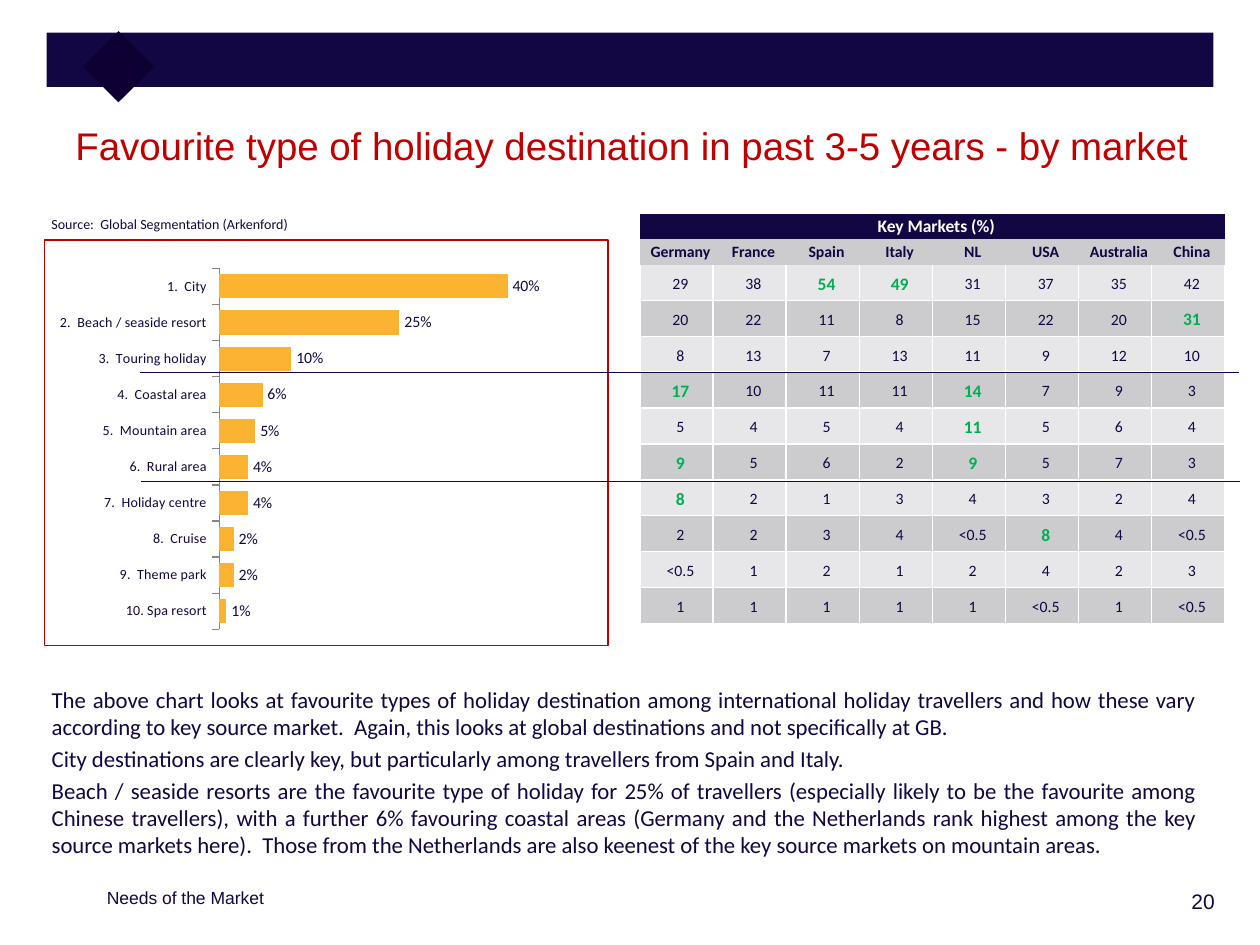
from lxml import etree
from pptx import Presentation
from pptx import util as u
from pptx.chart.data import CategoryChartData
from pptx.dml.color import RGBColor
from pptx.enum import chart as charts, shapes, text
from pptx.oxml import parse_xml
from pptx.oxml.ns import nsdecls, qn

COLORS = {"navy": "120742", "dark": "0E0033", "red": "C00000", "green": "00B050",
          "amber": "FDB332", "light": "E7E7E9", "grey": "CCCCCF",
          "axis": "868686", "white": "FFFFFF"}
ALIGN = text.PP_ALIGN
PLAIN_TABLE = "{2D5ABB26-0587-4C30-8999-92F81FD0307C}"


def rgb(name):
    return RGBColor.from_string(COLORS[name])


class SlideBuilder:
    def __init__(self, page, font="Calibri", color="navy"):
        self.page, self.font, self.color = page, font, color

    def frame(self, left, top, width, height):
        return [u.Inches(value) for value in (left, top, width, height)]

    def style(self, para, size, align=ALIGN.LEFT, font=None, color=None, bold=False):
        para.alignment = align
        for span in para.runs:
            span.font.size = u.Pt(size)
            span.font.name = font or self.font
            span.font.bold = bold
            span.font.color.rgb = rgb(color or self.color)

    def rect(self, place, color, rotation=0):
        shape = self.page.shapes.add_shape(
            shapes.MSO_SHAPE.RECTANGLE, *self.frame(*place))
        shape.shadow.inherit = False
        shape.fill.solid()
        shape.fill.fore_color.rgb = rgb(color)
        shape.line.fill.background()
        shape.rotation = rotation

    def text(self, place, lines, size, wrap=True, left=0.1, gap=0, spacing=None, **look):
        box = self.page.shapes.add_textbox(*self.frame(*place))
        frame = box.text_frame
        frame.word_wrap = wrap
        frame.margin_left = u.Inches(left)
        frame.text = "\n".join(lines)
        for index, para in enumerate(frame.paragraphs):
            self.style(para, size, **look)
            if spacing:
                para.line_spacing = u.Pt(spacing)
            if index:
                para.space_before = u.Pt(gap)

    def line(self, left, right, y):
        line = self.page.shapes.add_connector(
            shapes.MSO_CONNECTOR.STRAIGHT,
            u.Inches(left), u.Inches(y), u.Inches(right), u.Inches(y))
        line.line.color.rgb = rgb(self.color)
        line.line.width = u.Pt(0.5)
        etree.SubElement(line._element.spPr, qn("a:effectLst"))

    def cell(self, cell, value, fill, size=9, bold=True, color=None, body=False):
        cell.text_frame.text = value
        cell.vertical_anchor = text.MSO_ANCHOR.MIDDLE
        cell.margin_left, cell.margin_right = u.Inches(0.08), u.Inches(0.02)
        cell.margin_top = cell.margin_bottom = 0
        para = cell.text_frame.paragraphs[0]
        self.style(para, size, ALIGN.CENTER, color=color, bold=bold)
        if body:
            para.line_spacing = 1.15
            for side in ("lnL", "lnR", "lnB"):
                cell._tc.get_or_add_tcPr().append(parse_xml(
                    f'<a:{side} {nsdecls("a")} w="12700"><a:solidFill>'
                    f'<a:srgbClr val="{COLORS["white"]}"/></a:solidFill></a:{side}>'))
        cell.fill.solid()
        cell.fill.fore_color.rgb = rgb(fill)

    def table(self, place, title, heads, rows, marked):
        shape = self.page.shapes.add_table(
            len(rows) + 2, len(heads), *self.frame(*place))
        shape._element.find(".//" + qn("a:tableStyleId")).text = PLAIN_TABLE
        table = shape.table
        head_height = 0.2
        body_height = (place[3] - 2 * head_height) / len(rows)
        for index, row in enumerate(table.rows):
            row.height = u.Inches(head_height if index < 2 else body_height)
        for column in table.columns:
            column.width = u.Inches(place[2] / len(heads))
        table.cell(0, 0).merge(table.cell(0, len(heads) - 1))
        self.cell(table.cell(0, 0), title, "navy", size=10, color="white")
        for col, head in enumerate(heads):
            self.cell(table.cell(1, col), head, "grey")
        for row, values in enumerate(rows):
            fill = "grey" if row % 2 else "light"
            for col, value in enumerate(values):
                high = (row, col) in marked
                self.cell(table.cell(row + 2, col), value, fill,
                          size=10 if high else 9, bold=high,
                          color="green" if high else None, body=True)

    def bar_chart(self, place, names, values, plot):
        data = CategoryChartData()
        data.categories = names
        data.add_series("Series 1", values)
        chart = self.page.shapes.add_chart(
            charts.XL_CHART_TYPE.BAR_CLUSTERED, *self.frame(*place), data).chart
        chart.has_title = chart.has_legend = False
        chart.font.size, chart.font.name = u.Pt(10), self.font
        chart.font.color.rgb = rgb(self.color)
        # Axes
        names_axis, values_axis = chart.category_axis, chart.value_axis
        names_axis.reverse_order = True
        names_axis.has_major_gridlines = values_axis.has_major_gridlines = False
        names_axis.major_tick_mark = charts.XL_TICK_MARK.OUTSIDE
        names_axis.tick_labels.font.size = u.Pt(8)
        names_axis.format.line.color.rgb = rgb("axis")
        values_axis.minimum_scale, values_axis.maximum_scale = 0, 50
        values_axis.visible = False
        # Bars and their labels
        bars = chart.plots[0]
        bars.gap_width = 50
        bars.vary_by_categories = False
        fill = bars.series[0].format.fill
        fill.solid()
        fill.fore_color.rgb = rgb("amber")
        labels = bars.series[0].data_labels
        labels.show_value = True
        labels.number_format, labels.number_format_is_linked = "General\\%", False
        labels.position = charts.XL_LABEL_POSITION.OUTSIDE_END
        labels.font.size, labels.font.name = u.Pt(9), self.font
        labels.font.color.rgb = rgb(self.color)
        # Plot area position and outer border
        area = chart._chartSpace.find(".//" + qn("c:plotArea"))
        for old in area.findall(qn("c:layout")):
            area.remove(old)
        sizes = "".join(f'<c:{key} val="{value}"/>' for key, value in zip("xywh", plot))
        area.insert(0, parse_xml(
            f'<c:layout {nsdecls("c")}><c:manualLayout><c:layoutTarget val="inner"/>'
            f'<c:xMode val="edge"/><c:yMode val="edge"/>{sizes}'
            '</c:manualLayout></c:layout>'))
        chart._chartSpace.find(qn("c:chart")).addnext(parse_xml(
            f'<c:spPr {nsdecls("c", "a")}><a:noFill/><a:ln w="9525"><a:solidFill>'
            f'<a:srgbClr val="{COLORS["red"]}"/></a:solidFill></a:ln></c:spPr>'))


DESTINATIONS = ["1.  City", "2.  Beach / seaside resort", "3.  Touring holiday",
                "4.  Coastal area", "5.  Mountain area", "6.  Rural area",
                "7.  Holiday centre", "8.  Cruise", "9.  Theme park", "10. Spa resort"]
SHARES = [40, 25, 10, 6, 5, 4, 4, 2, 2, 1]
MARKETS = ["Germany", "France", "Spain", "Italy", "NL", "USA", "Australia", "China"]
MARKET_SHARES = [row.split() for row in (
    "29 38 54 49 31 37 35 42", "20 22 11 8 15 22 20 31", "8 13 7 13 11 9 12 10",
    "17 10 11 11 14 7 9 3", "5 4 5 4 11 5 6 4", "9 5 6 2 9 5 7 3",
    "8 2 1 3 4 3 2 4", "2 2 3 4 <0.5 8 4 <0.5", "<0.5 1 2 1 2 4 2 3",
    "1 1 1 1 1 <0.5 1 <0.5")]
HIGH = {(0, 2), (0, 3), (1, 7), (3, 0), (3, 4), (4, 4), (5, 0), (5, 4), (6, 0), (7, 5)}
COMMENTS = [
    "The above chart looks at favourite types of holiday destination among international "
    "holiday travellers and how these vary according to key source market.  Again, this "
    "looks at global destinations and not specifically at GB.",
    "City destinations are clearly key, but particularly among travellers from Spain and "
    "Italy.",
    "Beach / seaside resorts are the favourite type of holiday for 25% of travellers "
    "(especially likely to be the favourite among Chinese travellers), with a further 6% "
    "favouring coastal areas (Germany and the Netherlands rank highest among the key source "
    "markets here).  Those from the Netherlands are also keenest of the key source markets "
    "on mountain areas."]


def main():
    deck = Presentation()
    deck.slide_width, deck.slide_height = u.Inches(10), u.Inches(7.5)
    builder = SlideBuilder(deck.slides.add_slide(deck.slide_layouts[6]))

    # Banner, title and footer
    builder.rect((0.37, 0.26, 9.26, 0.43), "navy")
    builder.rect((0.74, 0.33, 0.4, 0.4), "dark", rotation=45)
    builder.text((0.5, 0.95, 9.13, 0.89),
                 ["Favourite type of holiday destination in past 3-5 years - by market"],
                 22, spacing=24, font="Arial", color="red")
    builder.text((0.75, 6.99, 1.77, 0.3), ["Needs of the Market"], 10, font="Arial")
    builder.text((8.53, 7, 1.21, 0.36), ["20"], 12, font="Arial", align=ALIGN.RIGHT)

    # Market table beside the overall chart
    builder.table((5.08, 1.7, 4.64, 3.25), "Key Markets (%)", MARKETS, MARKET_SHARES, HIGH)
    builder.bar_chart((0.35, 1.9, 4.48, 3.23), DESTINATIONS, SHARES,
                      plot=(0.31, 0.07, 0.64, 0.89))
    builder.text((0.31, 1.66, 2.11, 0.24), ["Source:  Global Segmentation (Arkenford)"],
                 8, wrap=False)

    # Commentary
    builder.text((0.37, 5.39, 9.21, 1.51), COMMENTS, 13, left=0.04, gap=2.6,
                 align=ALIGN.JUSTIFY)

    # Dividers across chart and table
    builder.line(1.11, 9.83, 2.96)
    builder.line(1.12, 9.84, 3.82)

    deck.save("out.pptx")


if __name__ == "__main__":
    main()
